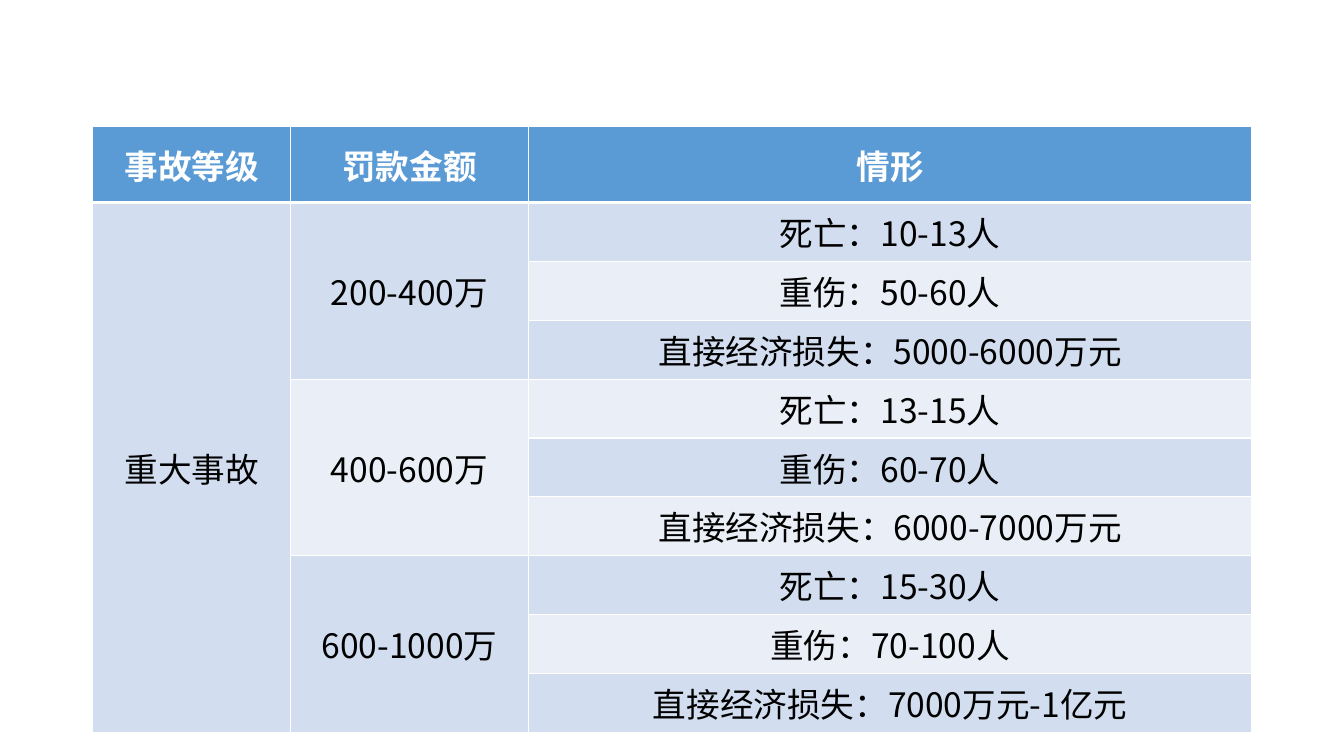
from lxml import etree
from pptx import Presentation
from pptx.dml.color import RGBColor
from pptx.enum.text import MSO_ANCHOR, PP_ALIGN
from pptx.oxml.ns import qn
from pptx.util import Pt

CENTER = PP_ALIGN.CENTER
MIDDLE = MSO_ANCHOR.MIDDLE

WHITE = RGBColor(0xFF, 0xFF, 0xFF)
BLACK = RGBColor(0x00, 0x00, 0x00)
HEADER_BLUE = RGBColor(0x5B, 0x9B, 0xD5)
BAND_DARK = RGBColor(0xD2, 0xDE, 0xEF)
BAND_LIGHT = RGBColor(0xEA, 0xEF, 0xF7)

FONT = "Noto Sans CJK SC"
FONT_SIZE = 24
LEFT, TOP = 66.3, 90.3
COLUMN_WIDTHS = [141.3, 169.7, 517]
HEADER_HEIGHT = 54.4
ROW_HEIGHT = 38.9

HEADERS = ["事故等级", "罚款金额", "情形"]
ACCIDENT_LEVEL = "重大事故"
CONDITIONS = ["死亡", "重伤", "直接经济损失"]
FINES = [
    ("200-400万", ["10-13人", "50-60人", "5000-6000万元"]),
    ("400-600万", ["13-15人", "60-70人", "6000-7000万元"]),
    ("600-1000万", ["15-30人", "70-100人", "7000万元-1亿元"]),
]


def add_border(cell, side, width):
    tcPr = cell._tc.get_or_add_tcPr()
    ln = etree.SubElement(tcPr, qn(f"a:ln{side}"), w=str(Pt(width)))
    fill = etree.SubElement(ln, qn("a:solidFill"))
    etree.SubElement(fill, qn("a:srgbClr"), val=str(WHITE))


def style_cell(cell, row):
    widths = {"L": 1, "R": 1, "T": 3 if row == 1 else 1, "B": 3 if row == 0 else 1}
    for side, width in widths.items():
        add_border(cell, side, width)
    cell.fill.solid()
    if row == 0:
        cell.fill.fore_color.rgb = HEADER_BLUE
    else:
        cell.fill.fore_color.rgb = BAND_DARK if row % 2 else BAND_LIGHT
    cell.vertical_anchor = MIDDLE


def set_text(cell, text, color=BLACK, bold=False):
    p = cell.text_frame.paragraphs[0]
    p.text = text
    p.alignment = CENTER
    font = p.runs[0].font
    font.name = FONT
    font.size = Pt(FONT_SIZE)
    font.bold = bold
    font.color.rgb = color
    etree.SubElement(font._element, qn("a:ea"), typeface=FONT)


def add_fine_table(slide):
    group = len(CONDITIONS)
    row_count = 1 + group * len(FINES)
    height = HEADER_HEIGHT + ROW_HEIGHT * (row_count - 1)
    table = slide.shapes.add_table(
        row_count, len(HEADERS), Pt(LEFT), Pt(TOP), Pt(sum(COLUMN_WIDTHS)), Pt(height)
    ).table
    for column, width in zip(table.columns, COLUMN_WIDTHS):
        column.width = Pt(width)
    for i, row in enumerate(table.rows):
        row.height = Pt(ROW_HEIGHT if i else HEADER_HEIGHT)
        for cell in row.cells:
            style_cell(cell, i)

    for col, header in enumerate(HEADERS):
        set_text(table.cell(0, col), header, WHITE, True)
    table.cell(1, 0).merge(table.cell(row_count - 1, 0))
    set_text(table.cell(1, 0), ACCIDENT_LEVEL)
    for i, (fine, ranges) in enumerate(FINES):
        first = 1 + i * group
        table.cell(first, 1).merge(table.cell(first + group - 1, 1))
        set_text(table.cell(first, 1), fine)
        for j, (condition, limits) in enumerate(zip(CONDITIONS, ranges)):
            set_text(table.cell(first + j, 2), f"{condition}：{limits}")


def main():
    prs = Presentation()
    prs.slide_width, prs.slide_height = Pt(960), Pt(540)
    add_fine_table(prs.slides.add_slide(prs.slide_layouts[6]))
    prs.save("out.pptx")


if __name__ == "__main__":
    main()
